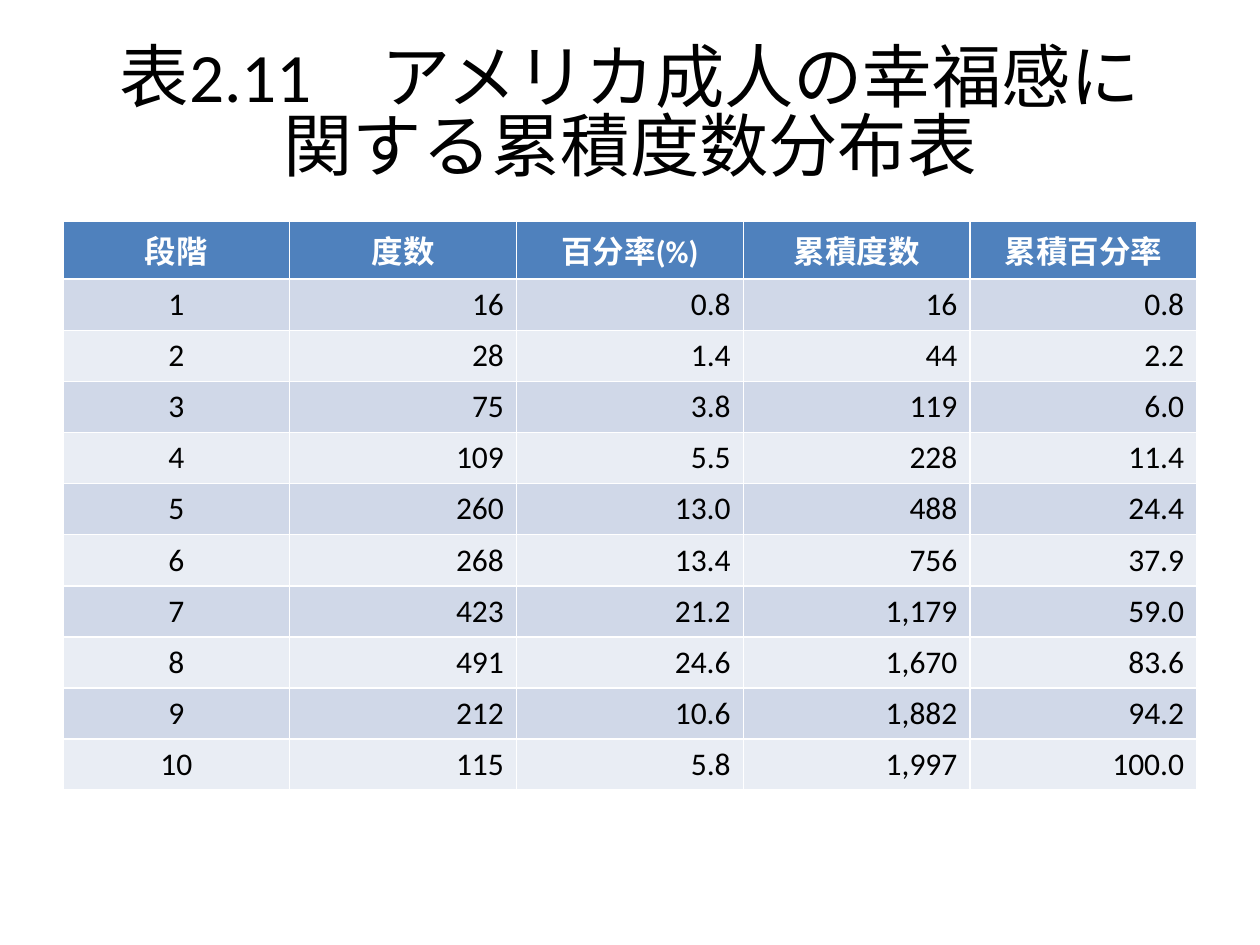
"""Build a slide with the cumulative frequency table of happiness ratings."""
from pptx import Presentation
from pptx.dml.color import RGBColor
from pptx.enum.text import MSO_ANCHOR, PP_ALIGN
from pptx.util import Pt

CENTER, RIGHT = PP_ALIGN.CENTER, PP_ALIGN.RIGHT
MIDDLE = MSO_ANCHOR.MIDDLE
PX = 914400 // 126
FONT = "Calibri"
BLACK = RGBColor(0x00, 0x00, 0x00)
WHITE = RGBColor(0xFF, 0xFF, 0xFF)
HEADER_BLUE = RGBColor(0x4F, 0x81, 0xBD)
BANDS = (RGBColor(0xD0, 0xD8, 0xE8), RGBColor(0xE9, 0xED, 0xF4))

TITLE_LINES = ("表2.11　アメリカ成人の幸福感に", "関する累積度数分布表")
HEADERS = ("段階", "度数", "百分率(%)", "累積度数", "累積百分率")
ROWS = (
    ("1", "16", "0.8", "16", "0.8"),
    ("2", "28", "1.4", "44", "2.2"),
    ("3", "75", "3.8", "119", "6.0"),
    ("4", "109", "5.5", "228", "11.4"),
    ("5", "260", "13.0", "488", "24.4"),
    ("6", "268", "13.4", "756", "37.9"),
    ("7", "423", "21.2", "1,179", "59.0"),
    ("8", "491", "24.6", "1,670", "83.6"),
    ("9", "212", "10.6", "1,882", "94.2"),
    ("10", "115", "5.8", "1,997", "100.0"),
)
LEFT, WIDTH = 63, 1134
TITLE_TOP, TITLE_HEIGHT = 38, 157
TABLE_TOP, ROW_HEIGHT = 221, 51


def add_run(paragraph, text, size, color, bold=False):
    run = paragraph.add_run()
    run.text = text
    run.font.name = FONT
    run.font.size = Pt(size)
    run.font.bold = bold
    run.font.color.rgb = color


def fill_title(title):
    title.left, title.top = LEFT * PX, TITLE_TOP * PX
    title.width, title.height = WIDTH * PX, TITLE_HEIGHT * PX
    title.text_frame.vertical_anchor = MIDDLE
    paragraph = title.text_frame.paragraphs[0]
    paragraph.alignment = CENTER
    paragraph.line_spacing = 0.83
    for index, line in enumerate(TITLE_LINES):
        if index:
            paragraph.add_line_break()
        add_run(paragraph, line, 39.6, BLACK)


def add_frequency_table(slide):
    records = (HEADERS, *ROWS)
    table = slide.shapes.add_table(
        len(records), len(HEADERS), LEFT * PX, TABLE_TOP * PX,
        WIDTH * PX, ROW_HEIGHT * len(records) * PX).table
    for row_index, record in enumerate(records):
        is_header = row_index == 0
        fill_color = HEADER_BLUE if is_header else BANDS[(row_index - 1) % 2]
        for column_index, text in enumerate(record):
            cell = table.cell(row_index, column_index)
            cell.fill.solid()
            cell.fill.fore_color.rgb = fill_color
            paragraph = cell.text_frame.paragraphs[0]
            paragraph.alignment = CENTER if is_header or column_index == 0 else RIGHT
            add_run(paragraph, text, 18, WHITE if is_header else BLACK, is_header)


def main():
    presentation = Presentation()
    presentation.slide_width, presentation.slide_height = 1260 * PX, 945 * PX
    slide = presentation.slides.add_slide(presentation.slide_layouts[5])
    fill_title(slide.shapes.title)
    add_frequency_table(slide)
    presentation.save("out.pptx")


if __name__ == "__main__":
    main()
